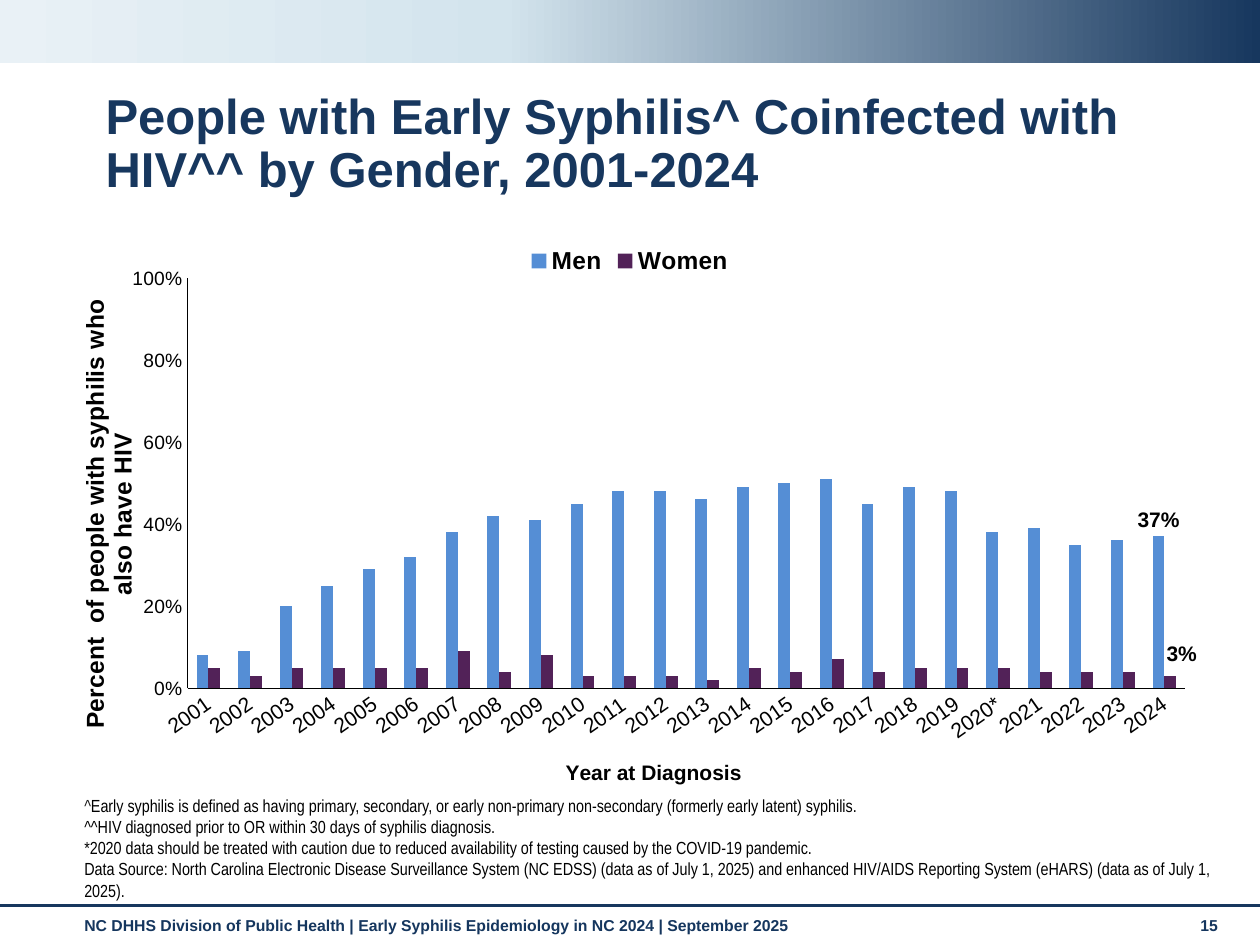
from copy import deepcopy

from lxml import etree
from pptx import Presentation
from pptx.chart.data import CategoryChartData
from pptx.dml.color import RGBColor
from pptx.enum.chart import XL_CHART_TYPE, XL_LABEL_POSITION, XL_LEGEND_POSITION, XL_TICK_MARK
from pptx.enum.shapes import MSO_CONNECTOR, MSO_SHAPE
from pptx.enum.text import MSO_ANCHOR
from pptx.oxml.ns import qn
from pptx.util import Cm, Pt

COLUMN = XL_CHART_TYPE.COLUMN_CLUSTERED
OUT_END = XL_LABEL_POSITION.OUTSIDE_END
LEGEND_TOP = XL_LEGEND_POSITION.TOP
NO_TICK = XL_TICK_MARK.NONE
STRAIGHT = MSO_CONNECTOR.STRAIGHT
RECT = MSO_SHAPE.RECTANGLE
TOP, BOTTOM = MSO_ANCHOR.TOP, MSO_ANCHOR.BOTTOM

NAVY, BLACK = "17375E", "000000"
FOOT = "15365E"
YEARS = [f"{year}*" if year == 2020 else str(year) for year in range(2001, 2025)]
MEN = [8, 9, 20, 25, 29, 32, 38, 42, 41, 45, 48, 48,
       46, 49, 50, 51, 45, 49, 48, 38, 39, 35, 36, 37]
WOMEN = [5, 3, 5, 5, 5, 5, 9, 4, 8, 3, 3, 3,
         2, 5, 4, 7, 4, 5, 5, 5, 4, 4, 4, 3]
NOTES = [
    ("^", "Early syphilis is defined as having primary, secondary, or early "
     "non-primary non-secondary (formerly early latent) syphilis."),
    ("^^HIV diagnosed prior to OR within 30 days of syphilis diagnosis.",),
    ("*2020 data should be treated with caution due to reduced availability "
     "of testing caused by the COVID-19 pandemic.",),
    ("Data Source: North Carolina Electronic Disease Surveillance System (NC EDSS) "
     "(data as of July 1, 2025) and enhanced HIV/AIDS Reporting System (eHARS) "
     "(data as of July 1, 2025).",),
]


def rgb(code):
    """Turn a hex string into a colour."""
    return RGBColor.from_string(code)


def style(font, size, color=BLACK, bold=False, name="Arial"):
    """Set the look of a font."""
    font.name, font.size, font.bold = name, Pt(size), bold
    font.color.rgb = rgb(color)


def add_text(slide, area, lines, size, color, bold=True, name="Arial", anchor=TOP, space=None):
    """Add a wrapped text box, each line a tuple of runs."""
    frame = slide.shapes.add_textbox(*map(Cm, area)).text_frame
    frame.word_wrap = True
    frame.vertical_anchor = anchor
    for i, line in enumerate(lines):
        para = frame.add_paragraph() if i else frame.paragraphs[0]
        para.line_spacing = space
        style(para.font, size, color, bold, name)
        for part in line:
            para.add_run().text = part
    return frame


def add_band(slide, area, stops):
    """Add a rectangle with a gradient that runs from right to left."""
    band = slide.shapes.add_shape(RECT, *map(Cm, area))
    band.shadow.inherit = False
    band.line.fill.background()
    band.fill.gradient()
    band.fill.gradient_angle = 180
    first = band._element.spPr.find(".//" + qn("a:gs"))
    first.addnext(deepcopy(first))
    for stop, (place, color) in zip(band.fill.gradient_stops, stops):
        stop.position = place
        stop.color.rgb = rgb(color)


def add_rule(slide, y, width):
    """Add a horizontal line across the slide."""
    rule = slide.shapes.add_connector(STRAIGHT, 0, Cm(y), Cm(width), Cm(y))
    rule.line.color.rgb = rgb(NAVY)
    rule.line.width = Pt(1.75)
    etree.SubElement(rule._element.spPr, qn("a:effectLst"))


def set_layout(node, index, **values):
    """Give a chart part a manual layout, as fractions of the chart."""
    for old in node.findall(qn("c:layout")):
        node.remove(old)
    layout = etree.Element(qn("c:layout"))
    node.insert(index, layout)
    manual = etree.SubElement(layout, qn("c:manualLayout"))
    for key, value in values.items():
        etree.SubElement(manual, qn(f"c:{key}")).set("val", str(value))


def style_axis(axis, title, size, tick, turn, x, y):
    """Set the title, labels and line of an axis."""
    axis.has_major_gridlines = False
    axis.major_tick_mark = axis.minor_tick_mark = NO_TICK
    axis.format.line.color.rgb = rgb(BLACK)
    axis.format.line.width = Pt(0.25)
    style(axis.tick_labels.font, tick)
    frame = axis.axis_title.text_frame
    frame.text = title
    frame._txBody.bodyPr.set("rot", str(turn * 60000))
    style(frame.paragraphs[0].font, size, bold=True)
    set_layout(axis.axis_title._element, 1, xMode="edge", yMode="edge", x=x, y=y)


def style_series(series, color):
    """Colour a series and label its last point only."""
    series.format.fill.solid()
    series.format.fill.fore_color.rgb = rgb(color)
    label = series.points[len(YEARS) - 1].data_label
    style(label.font, 12, bold=True)
    label.position = OUT_END
    series.data_labels.show_value = False


def add_chart(slide, area):
    """Add the column chart of coinfection by gender."""
    data = CategoryChartData(number_format="0%")
    data.categories = YEARS
    for name, shares in (("Men", MEN), ("Women", WOMEN)):
        data.add_series(name, [share / 100 for share in shares])
    chart = slide.shapes.add_chart(COLUMN, *map(Cm, area), data).chart
    style(chart.font, 12, bold=True)
    chart.has_title = False
    chart.has_legend = True
    chart.legend.position = LEGEND_TOP
    chart.legend.include_in_layout = False
    style(chart.legend.font, 14, bold=True)
    plot = chart.plots[0]
    plot.gap_width, plot.overlap, plot.vary_by_categories = 150, 0, False
    for series, color in zip(plot.series, ("558ED5", "522258")):
        style_series(series, color)
    last = plot.series[1]._element.find(".//" + qn("c:dLbl"))
    set_layout(last, 1, x=0.01, y=-0.01)
    style_axis(chart.category_axis, "Year at Diagnosis", 12, 12, 0, 0.44, 0.93)
    chart.category_axis._element.find(qn("c:txPr")).find(qn("a:bodyPr")).set("rot", "-2100000")
    share = chart.value_axis
    style_axis(share, "Percent  of people with syphilis who also have HIV", 14, 11, -90, 0.01, 0.11)
    share.minimum_scale, share.maximum_scale, share.major_unit = 0, 1, 0.2
    share.tick_labels.number_format = "0%"
    share.tick_labels.number_format_is_linked = False
    inner = chart._chartSpace.find(".//" + qn("c:plotArea"))
    set_layout(inner, 0, layoutTarget="inner", xMode="edge", yMode="edge",
               x=0.11, y=0.08, w=0.88, h=0.73)


def main():
    """Build the slide and save it."""
    deck = Presentation()
    deck.slide_width, deck.slide_height = Cm(25.4), Cm(19.05)
    slide = deck.slides.add_slide(deck.slide_layouts[6])
    add_text(slide, (1.45, 18.34, 22.2, 0.74),
             [("NC DHHS Division of Public Health | Early Syphilis Epidemiology "
               "in NC 2024 | September 2025",)], 9, FOOT)
    add_text(slide, (23.95, 18.34, 1.12, 0.76), [("15",)], 9, FOOT)
    add_band(slide, (0, 0, 25.4, 1.27), [(0, NAVY), (0.6, "D3E4ED"), (1, "E9F1F6")])
    add_rule(slide, 18.26, 25.4)
    add_text(slide, (1.88, 1.73, 23.19, 1.52),
             [("People with Early Syphilis^ Coinfected with HIV^^ by Gender, 2001-2024",)],
             28, NAVY, space=0.9)
    notes = add_text(slide, (1.45, 17.75, 23.6, 0.53), NOTES, 10, BLACK, False,
                     "Arial Narrow", BOTTOM)
    notes.paragraphs[0].runs[0].font.color.rgb = rgb("1A1A1A")
    add_chart(slide, (1.27, 4.7, 22.86, 11.33))
    deck.save("out.pptx")


if __name__ == "__main__":
    main()
